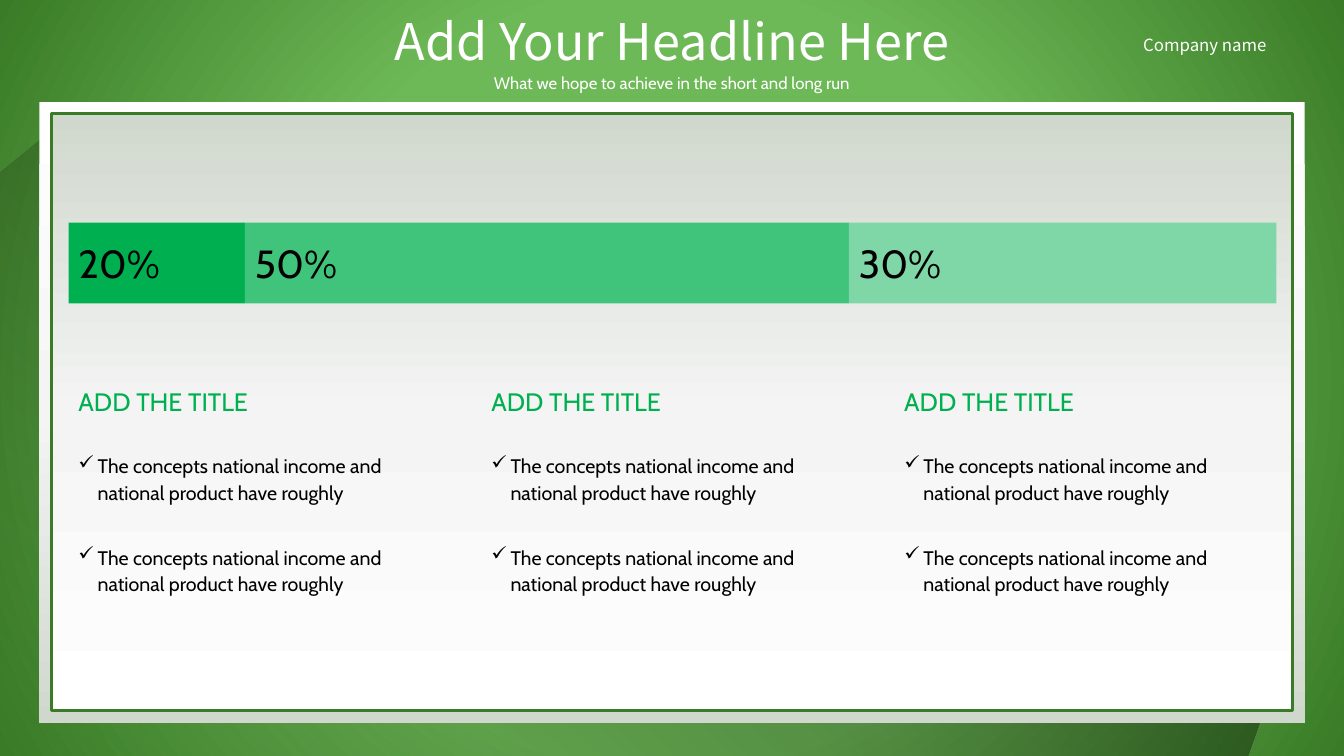
from lxml import etree
from pptx import Presentation
from pptx import util as u
from pptx.dml import color
from pptx.enum import shapes, text
from pptx.oxml import ns

SANS, CABIN = "Noto Sans CJK SC", "Cabin"
WHITE, BLACK, GREEN, EDGE = "FFFFFF", "000000", "00B050", "397B26"
PANEL = [(0, WHITE, 100), (50, "F4F4F4", 100), (100, "D0D8CD", 100)]
BARS = [("20%", 1.75, GREEN), ("50%", 5.99, "40C47C"), ("30%", 4.24, "7FD7A7")]
POINT = "The concepts national income and national product have roughly"
LEFT, STEP = 0.68, 4.095
FIT = text.MSO_AUTO_SIZE.SHAPE_TO_FIT_TEXT
MIDDLE = text.MSO_ANCHOR.MIDDLE
HEAD = dict(word_wrap=False, auto_size=text.MSO_AUTO_SIZE.NONE,
            vertical_anchor=MIDDLE, margin_top=0, margin_bottom=0)
LABEL = dict(word_wrap=False, auto_size=FIT)
BODY = dict(word_wrap=True, auto_size=FIT)
BAR = dict(word_wrap=True, vertical_anchor=MIDDLE)


def rgb(code):
    """Return the colour for a hex string."""
    return color.RGBColor.from_string(code)


def box(*sizes):
    """Return the given lengths in inches."""
    return [u.Inches(size) for size in sizes]


def apply(item, values):
    """Set each attribute of an item from a dict."""
    for name, value in values.items():
        setattr(item, name, value)


def add(parent, tag, **values):
    """Append a drawing element with its attributes."""
    node = etree.SubElement(parent, ns.qn(tag))
    for name, value in values.items():
        node.set(name, str(value))
    return node


def blend(fill, parent, stops, angle=None):
    """Fill with a linear gradient, or a round one without an angle."""
    fill.solid()
    old = parent.find(ns.qn("a:solidFill"))
    grad = etree.Element(ns.qn("a:gradFill"), rotWithShape="1")
    items = add(grad, "a:gsLst")
    for place, code, alpha in stops:
        stop = add(items, "a:gs", pos=place * 1000)
        tone = add(stop, "a:srgbClr", val=code)
        if alpha < 100:
            add(tone, "a:alpha", val=alpha * 1000)
    if angle is None:
        path = add(grad, "a:path", path="circle")
        add(path, "a:fillToRect", l=50000, t=50000, r=50000, b=50000)
    else:
        add(grad, "a:lin", ang=angle * 60000, scaled=0)
    parent.replace(old, grad)


def write(shape, words, size, face, code, frame, bullet=None, **para):
    """Write one formatted paragraph into a shape."""
    apply(shape.text_frame, frame)
    line = shape.text_frame.paragraphs[0]
    if bullet:
        props = line._p.get_or_add_pPr()
        props.set("marL", str(u.Inches(0.19)))
        props.set("indent", str(u.Inches(-0.19)))
        add(props, "a:buChar", char=bullet)
    apply(line, para)
    run = line.add_run()
    run.text = words
    apply(run.font, dict(size=u.Pt(size), name=face))
    run.font.color.rgb = rgb(code)


def label(slide, place, *args, **para):
    """Add a text box."""
    write(slide.shapes.add_textbox(*box(*place)), *args, **para)


def shade(slide):
    """Add the diagonal shadow behind the panel."""
    points = [(0.39, 1.38), (12.59, 6.88), (12.37, 7.5), (0, 7.5), (0, 1.7)]
    first, *rest = [box(*point) for point in points]
    form = slide.shapes.build_freeform(*first)
    form.add_line_segments(rest, close=True)
    shape = form.convert_to_shape()
    shape.shadow.inherit = False
    shape.line.fill.background()
    blend(shape.fill, shape._element.spPr,
          [(0, BLACK, 50), (100, BLACK, 0)], 135)


def panel(slide, place, angle, edge=None):
    """Add a square-cornered gradient panel."""
    kind = shapes.MSO_SHAPE.ROUNDED_RECTANGLE
    shape = slide.shapes.add_shape(kind, *box(*place))
    shape.adjustments[0] = 0
    shape.shadow.inherit = False
    blend(shape.fill, shape._element.spPr, PANEL, angle)
    if edge:
        shape.line.color.rgb = rgb(edge)
        shape.line.width = u.Pt(2.25)
    else:
        shape.line.fill.background()


def bars(slide):
    """Add the row of share bars."""
    left = LEFT
    for words, width, code in BARS:
        shape = slide.shapes.add_shape(
            shapes.MSO_SHAPE.RECTANGLE, *box(left, 2.21, width, 0.8))
        shape.shadow.inherit = False
        shape.fill.solid()
        shape.fill.fore_color.rgb = rgb(code)
        shape.line.fill.background()
        write(shape, words, 28, CABIN, BLACK, BAR, alignment=text.PP_ALIGN.LEFT)
        left += width


def column(slide, left):
    """Add a heading with two ticked points."""
    label(slide, (left, 3.78, 2.1, 0.4), "ADD THE TITLE", 18, CABIN, GREEN, LABEL)
    for top in (4.42, 5.33):
        label(slide, (left, top, 3.79, 0.64), POINT, 14, CABIN, BLACK, BODY,
              bullet="✓", line_spacing=1.14)


def main():
    """Build and save the slide."""
    deck = Presentation()
    apply(deck, dict(slide_width=u.Inches(13.33), slide_height=u.Inches(7.5)))
    slide = deck.slides.add_slide(deck.slide_layouts[5])
    fill = slide.background.fill
    fill.solid()
    blend(fill, slide.element.find(".//" + ns.qn("p:bgPr")),
          [(50, "6EB957", 100), (100, EDGE, 100)])
    center = text.PP_ALIGN.CENTER
    title = slide.shapes.title
    apply(title, dict(zip(("left", "top", "width", "height"),
                          box(3.62, 0.05, 6.09, 0.71))))
    write(title, "Add Your Headline Here", 36, SANS, WHITE, HEAD,
          alignment=center)
    label(slide, (11.24, 0.29, 1.56, 0.3), "Company name", 12, SANS, WHITE, HEAD)
    shade(slide)
    panel(slide, (0.39, 1.01, 12.55, 6.16), 90)
    panel(slide, (0.51, 1.13, 12.31, 5.92), 270, EDGE)
    label(slide, (4.77, 0.65, 3.79, 0.32),
          "What we hope to achieve in the short and long run",
          12, CABIN, WHITE, LABEL, alignment=center, line_spacing=1.1)
    bars(slide)
    for index in range(3):
        column(slide, LEFT + index * STEP)
    deck.save("out.pptx")


if __name__ == "__main__":
    main()
